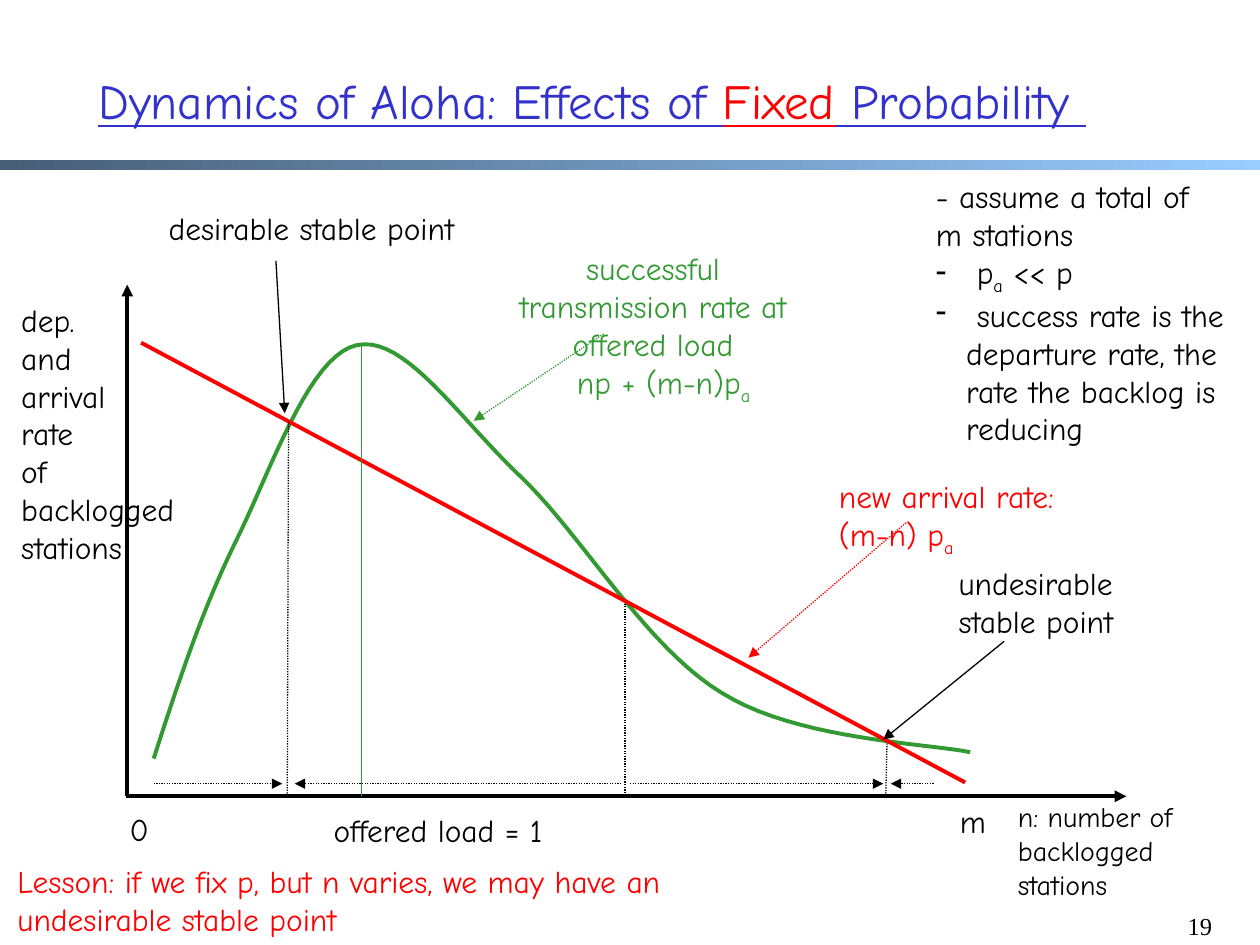
import dataclasses
import pptx
import pptx.dml.color
import pptx.enum.dml
import pptx.enum.shapes
import pptx.enum.text
import pptx.oxml.ns
import pptx.util
from lxml import etree

Inches = pptx.util.Inches
Pt = pptx.util.Pt
ALIGN = pptx.enum.text.PP_ALIGN


@dataclasses.dataclass
class Theme:
    face: str = "Comic Neue"
    serif: str = "Times New Roman"
    ink: str = "000000"
    blue: str = "3333CC"
    red: str = "FF0000"
    green: str = "339933"
    dark: str = "475E76"
    light: str = "99CCFF"
    head: int = 28
    body: int = 18
    small: int = 16
    page: int = 14
    thick: float = 2.25
    thin: float = 0.75


def rgb(code):
    return pptx.dml.color.RGBColor.from_string(code)


def child(node, tag, **attrs):
    return etree.SubElement(node, pptx.oxml.ns.qn(tag), **attrs)


def write(frame, text, face, size, color, align=ALIGN.LEFT, accent=None, line=False, dash=()):
    """Lines are paragraphs, \\v is a break, and text between bars is accented or lowered."""
    for row, line_text in enumerate(text.split("\n")):
        para = frame.paragraphs[0] if row == 0 else frame.add_paragraph()
        para.alignment = align
        if row in dash:
            props = para._p.get_or_add_pPr()
            props.set("marL", str(Inches(0.24)))
            props.set("indent", str(-Inches(0.24)))
            child(props, "a:buChar", char="-")
        for odd, part in enumerate(line_text.split("|")):
            for turn, piece in enumerate(part.split("\v")):
                if turn:
                    para.add_line_break()
                run = para.add_run()
                run.text = piece
                font = run.font
                font.name, font.size, font.underline = face, Pt(size), line
                font.color.rgb = rgb(accent if accent and odd % 2 else color)
                if odd % 2 and not accent:
                    run._r.get_or_add_rPr().set("baseline", "-25000")


class Board:
    def __init__(self, deck, theme):
        self.theme = theme
        self.slide = deck.slides.add_slide(deck.slide_layouts[5])
        self.shapes = self.slide.shapes

    def title(self, text, x, y, w, h):
        t = self.theme
        box = self.shapes.title
        box.left, box.top, box.width, box.height = map(Inches, (x, y, w, h))
        frame = box.text_frame
        frame.auto_size = pptx.enum.text.MSO_AUTO_SIZE.NONE
        frame.vertical_anchor = pptx.enum.text.MSO_ANCHOR.MIDDLE
        write(frame, text, t.face, t.head, t.blue, accent=t.red, line=True)

    def band(self, x, y, w, h):
        kind = pptx.enum.shapes.MSO_SHAPE.RECTANGLE
        bar = self.shapes.add_shape(kind, *map(Inches, (x, y, w, h)))
        bar.shadow.inherit = False
        bar.line.fill.background()
        bar.fill.gradient()
        bar.fill.gradient_angle = 0
        for stop, code in zip(bar.fill.gradient_stops, (self.theme.dark, self.theme.light)):
            stop.color.rgb = rgb(code)

    def text(self, text, x, y, w, h, color=None, size=None, face=None, wrap=False, **fmt):
        t = self.theme
        frame = self.shapes.add_textbox(*map(Inches, (x, y, w, h))).text_frame
        frame.word_wrap = wrap
        write(frame, text, face or t.face, size or t.body, color or t.ink, **fmt)

    def line(self, x1, y1, x2, y2, color=None, width=None, dots=False, arrow=False):
        t = self.theme
        kind = pptx.enum.shapes.MSO_CONNECTOR.STRAIGHT
        rule = self.shapes.add_connector(kind, *map(Inches, (x1, y1, x2, y2)))
        rule.line.color.rgb = rgb(color or t.ink)
        rule.line.width = Pt(width or t.thin)
        if dots:
            rule.line.dash_style = pptx.enum.dml.MSO_LINE.ROUND_DOT
        if arrow:
            child(rule.line._get_or_add_ln(), "a:tailEnd", type="triangle")
        child(rule._element.spPr, "a:effectLst")

    def curve(self, start, bends, color, steps=20):
        spots = []
        last = start
        for bend in bends:
            for step in range(1, steps + 1):
                u = step / steps
                mix = ((1 - u) ** 3, 3 * u * (1 - u) ** 2, 3 * u * u * (1 - u), u ** 3)
                knots = (last, *bend)
                spots.append(tuple(Inches(sum(m * k[axis] for m, k in zip(mix, knots)))
                                   for axis in (0, 1)))
            last = bend[-1]
        pen = self.shapes.build_freeform(*map(Inches, start))
        pen.add_line_segments(spots, close=False)
        shape = pen.convert_to_shape()
        shape.shadow.inherit = False
        shape.fill.background()
        shape.line.color.rgb = rgb(color)
        shape.line.width = Pt(self.theme.thick)


def main():
    deck = pptx.Presentation()
    deck.slide_width, deck.slide_height = Inches(10), Inches(7.5)
    t = Theme()
    b = Board(deck, t)
    b.band(0, 1.27, 10, 0.08)
    b.title("Dynamics of Aloha: Effects of |Fixed| Probability ", 0.68, 0.17, 8.89, 1.25)
    b.text("19", 9.25, 7.18, 0.47, 0.32, size=t.page, face=t.serif, align=ALIGN.RIGHT)

    base = 6.32
    b.line(1, base, 8.94, base, width=t.thick, arrow=True)
    b.line(1.01, base, 1.01, 2.26, width=t.thick, arrow=True)
    b.text("n: number of \vbacklogged\nstations", 7.98, 6.3, 1.85, 0.9, size=t.small, wrap=True)
    b.text("0", 0.93, 6.38, 0.35, 0.4)
    b.text("m", 7.52, base, 0.4, 0.4)

    b.curve((1.22, 6.02), [
        ((1.41, 5.43), (1.6, 4.85), (1.87, 4.3)),
        ((2.14, 3.76), (2.45, 2.82), (2.83, 2.74)),
        ((3.21, 2.65), (3.65, 3.33), (4.14, 3.79)),
        ((4.62, 4.25), (5.13, 5.14), (5.73, 5.5)),
        ((6.32, 5.87), (7.36, 5.9), (7.7, 5.97)),
    ], t.green)
    b.line(4.79, 2.65, 3.76, 3.34, t.green, dots=True, arrow=True)
    b.text("successful \vtransmission rate at \voffered load \v np + (m-n)p|a|",
           3.91, 1.93, 2.63, 1.3, t.green, align=ALIGN.CENTER)

    b.line(1.12, 2.72, 7.66, 6.21, t.red, t.thick)
    b.line(7.19, 4.15, 5.94, 5.22, t.red, dots=True, arrow=True)
    b.text("new arrival rate:\v(m-n) p|a|", 6.56, 3.74, 2.12, 0.7, t.red)

    b.line(2.19, 2.07, 2.26, 3.28, arrow=True)
    b.text("desirable stable point", 1.24, 1.61, 2.73, 0.4)
    b.line(7.97, 5.09, 7.01, 5.87, arrow=True)
    b.text("undesirable \vstable point", 7.51, 4.43, 1.61, 0.7)
    b.text("Lesson: if we fix p, but n varies, we may have an \vundesirable stable point",
           0.04, 6.79, 5.85, 0.7, t.red)

    for top, x1, x2 in ((3.34, 2.29, 2.28), (4.79, 4.96, 4.96), (5.9, 7.04, 7.03)):
        b.line(x1, top, x2, base, dots=True)
    for tail, tip in ((1.22, 2.24), (4.93, 2.34), (5, 7.01), (7.41, 7.07)):
        b.line(tail, 6.22, tip, 6.22, dots=True, arrow=True)
    b.line(2.87, 2.73, 2.87, base, t.green)
    b.text("offered load = 1", 2.55, 6.39, 2.07, 0.4)

    b.text("- assume a total of\nm stations\n p|a| << p\n"
           " success rate is the\vdeparture rate, the \vrate the backlog is \vreducing",
           7.33, 1.36, 2.59, 2.2, dash=(2, 3))
    b.text("dep.\nand\narrival\nrate\nof\nbacklogged\nstations", 0.07, 2.34, 1.49, 2.2)
    deck.save("out.pptx")


if __name__ == "__main__":
    main()
